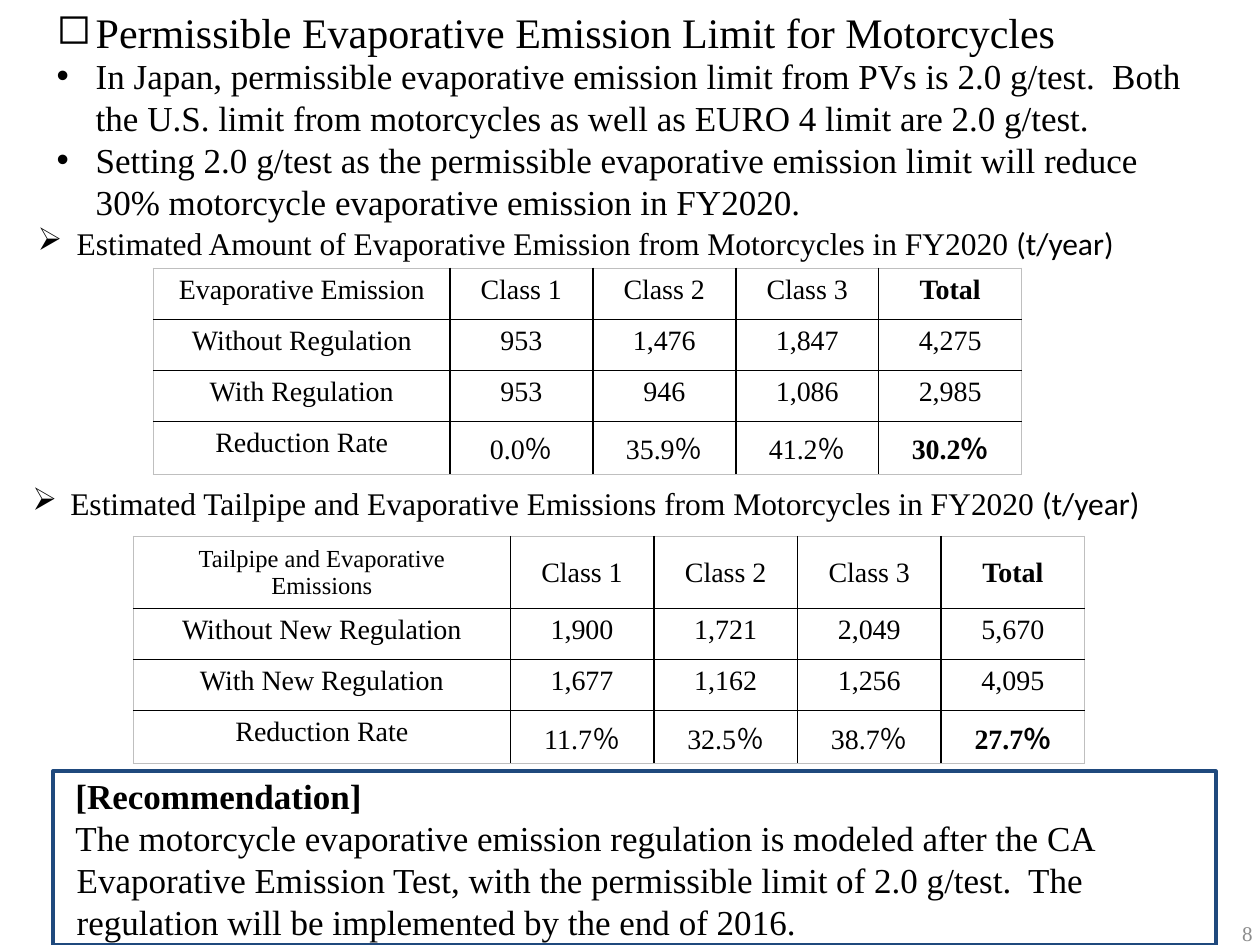
from pptx import Presentation
from pptx.dml.color import RGBColor
from pptx.enum.shapes import MSO_SHAPE
from pptx.enum.text import MSO_ANCHOR, MSO_AUTO_SIZE, PP_ALIGN
from pptx.oxml.ns import qn
from pptx.util import Inches, Pt
from lxml import etree

RECTANGLE = MSO_SHAPE.RECTANGLE
TOP, MIDDLE = MSO_ANCHOR.TOP, MSO_ANCHOR.MIDDLE
LEFT, CENTER, RIGHT = PP_ALIGN.LEFT, PP_ALIGN.CENTER, PP_ALIGN.RIGHT
NO_AUTOSIZE = MSO_AUTO_SIZE.NONE

BLACK = RGBColor(0x00, 0x00, 0x00)
GRAY = RGBColor(0x8C, 0x8C, 0x8C)
FRAME_GRAY = RGBColor(0xBF, 0xBF, 0xBF)
NAVY = RGBColor(0x1F, 0x49, 0x7D)
SERIF, SANS = "Times New Roman", "Calibri"

LIMITS = [
    "In Japan, permissible evaporative emission limit from PVs is 2.0 g/test.  "
    "Both the U.S. limit from motorcycles as well as EURO 4 limit are 2.0 g/test.",
    "Setting 2.0 g/test as the permissible evaporative emission limit will reduce "
    "30% motorcycle evaporative emission in FY2020.",
]
CLASSES = ["Class 1", "Class 2", "Class 3", "Total"]
EVAPORATIVE = [
    ["Evaporative Emission", *CLASSES],
    ["Without Regulation", "953", "1,476", "1,847", "4,275"],
    ["With Regulation", "953", "946", "1,086", "2,985"],
    ["Reduction Rate", "0.0％", "35.9％", "41.2％", "30.2％"],
]
TAILPIPE = [
    ["Tailpipe and Evaporative Emissions", *CLASSES],
    ["Without New Regulation", "1,900", "1,721", "2,049", "5,670"],
    ["With New Regulation", "1,677", "1,162", "1,256", "4,095"],
    ["Reduction Rate", "11.7％", "32.5％", "38.7％", "27.7％"],
]
RECOMMENDATION = (
    "The motorcycle evaporative emission regulation is modeled after the CA "
    "Evaporative Emission Test, with the permissible limit of 2.0 g/test.  "
    "The regulation will be implemented by the end of 2016."
)


def set_format(target, values):
    for name, value in values.items():
        setattr(target, name, value)


def place(shape, left, top, width, height):
    set_format(shape, {"left": Inches(left), "top": Inches(top),
                       "width": Inches(width), "height": Inches(height)})


def set_frame(frame, anchor=TOP, **margins):
    set_format(frame, {"word_wrap": True, "auto_size": NO_AUTOSIZE,
                       "vertical_anchor": anchor, **margins})


def write(paragraph, text, size, font=SERIF, color=BLACK, bold=False, align=LEFT):
    """Add a formatted run to a paragraph."""
    set_format(paragraph, {"alignment": align, "line_spacing": 1.0,
                           "space_before": Pt(0), "space_after": Pt(0)})
    run = paragraph.add_run()
    run.text = text
    set_format(run.font, {"size": Pt(size), "name": font, "bold": bold})
    run.font.color.rgb = color


def indent(paragraph, margin, first_line, bullet=None):
    """Set the indents and, if given, the bullet character."""
    properties = paragraph._p.get_or_add_pPr()
    properties.set("marL", str(Inches(margin)))
    properties.set("indent", str(Inches(first_line)))
    if bullet:
        etree.SubElement(properties, qn("a:buChar")).set("char", bullet)


def add_caption(slide, box, text, hanging):
    caption = slide.shapes.add_textbox(*map(Inches, box))
    set_frame(caption.text_frame)
    paragraph = caption.text_frame.paragraphs[0]
    write(paragraph, text, 18)
    write(paragraph, " (t/year)", 18, font=SANS)
    indent(paragraph, hanging, -hanging, "➢")


def set_border(cell, side, color):
    line = etree.SubElement(cell._tc.get_or_add_tcPr(), qn(f"a:{side}"))
    line.set("w", str(Pt(1)))
    fill = etree.SubElement(line, qn("a:solidFill"))
    etree.SubElement(fill, qn("a:srgbClr")).set("val", str(color))


def add_emission_table(slide, left, top, rows, label_width, class_width,
                       header_height, label_size, header_anchor):
    widths = [label_width] + [class_width] * len(CLASSES)
    heights = [header_height] + [0.405] * (len(rows) - 1)
    table = slide.shapes.add_table(
        len(rows), len(widths), Inches(left), Inches(top),
        Inches(sum(widths)), Inches(sum(heights))).table
    set_format(table, {"first_row": False, "horz_banding": False})
    for column, width in zip(table.columns, widths):
        column.width = Inches(width)
    for row, height in zip(table.rows, heights):
        row.height = Inches(height)

    last_row, last_column = len(rows) - 1, len(widths) - 1
    for r, values in enumerate(rows):
        for c, value in enumerate(values):
            cell = table.cell(r, c)
            cell.vertical_anchor = header_anchor if r == 0 else TOP
            write(cell.text_frame.paragraphs[0], value,
                  label_size if r == c == 0 else 16,
                  bold=c == last_column and r in (0, last_row), align=CENTER)
            outer_sides = {"lnL": c == 0, "lnR": c == last_column,
                           "lnT": r == 0, "lnB": r == last_row}
            for side, is_outer in outer_sides.items():
                set_border(cell, side, FRAME_GRAY if is_outer else BLACK)
            cell.fill.background()


def add_recommendation(slide):
    panel = slide.shapes.add_shape(
        RECTANGLE, *map(Inches, (0.42, 6.12, 9.23, 1.38)))
    panel.shadow.inherit = False
    panel.fill.background()
    panel.line.color.rgb = NAVY
    panel.line.width = Pt(2)
    frame = panel.text_frame
    set_frame(frame, MIDDLE)
    write(frame.paragraphs[0], "[Recommendation]", 20, bold=True)
    write(frame.add_paragraph(), RECOMMENDATION, 20)
    for paragraph in frame.paragraphs:
        indent(paragraph, 0.09, -0.01)


def main():
    presentation = Presentation()
    presentation.slide_width, presentation.slide_height = Inches(10), Inches(7.5)
    slide = presentation.slides.add_slide(presentation.slide_layouts[1])

    # Heading and the two points below it
    title, body = slide.placeholders
    place(title, 0.35, 0, 9.29, 0.43)
    set_frame(title.text_frame, margin_bottom=0)
    heading = title.text_frame.paragraphs[0]
    write(heading, "Permissible Evaporative Emission Limit for Motorcycles", 24)
    indent(heading, 0.31, -0.31, "◻")

    place(body, 0.35, 0.43, 9.29, 1.42)
    set_frame(body.text_frame, margin_top=0)
    for i, limit in enumerate(LIMITS):
        point = body.text_frame.add_paragraph() if i else body.text_frame.paragraphs[0]
        write(point, limit, 20)
        indent(point, 0.31, -0.31, "•")

    # Emission tables with their captions
    add_caption(slide, (0.2, 1.73, 9.8, 0.4),
                "Estimated Amount of Evaporative Emission from Motorcycles in FY2020", 0.31)
    add_emission_table(slide, 1.22, 2.13, EVAPORATIVE, 2.35, 1.135, 0.405, 16, TOP)
    add_caption(slide, (0.16, 3.79, 10.04, 0.4),
                "Estimated Tailpipe and Evaporative Emissions from Motorcycles in FY2020", 0.3)
    add_emission_table(slide, 1.06, 4.26, TAILPIPE, 2.99, 1.14, 0.57, 14, MIDDLE)

    # Recommendation and page number
    add_recommendation(slide)
    page_number = slide.shapes.add_textbox(*map(Inches, (7.71, 7.21, 2.33, 0.4)))
    set_frame(page_number.text_frame, MIDDLE)
    write(page_number.text_frame.paragraphs[0], "8", 12, color=GRAY, align=RIGHT)

    presentation.save("out.pptx")


if __name__ == "__main__":
    main()
